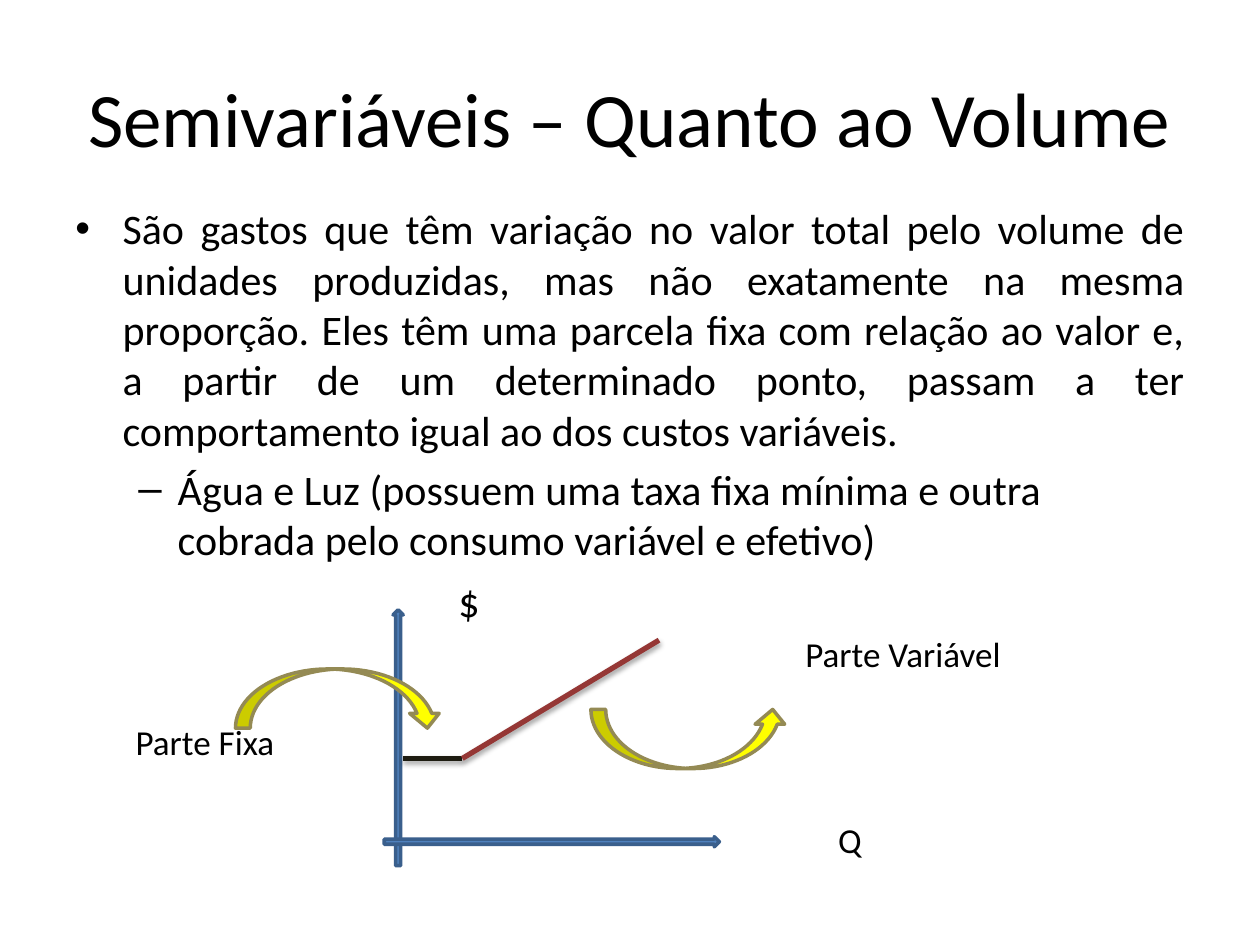
from typing import NamedTuple

from lxml.etree import SubElement
from pptx import Presentation
from pptx.dml.color import RGBColor
from pptx.enum.shapes import MSO_CONNECTOR, MSO_SHAPE
from pptx.enum.text import MSO_ANCHOR, PP_ALIGN
from pptx.oxml.ns import qn
from pptx.util import Pt


class Arrow(NamedTuple):
    kind: MSO_SHAPE
    box: tuple
    fill: str
    line: str


class Segment(NamedTuple):
    start: tuple
    end: tuple
    color: str
    shadow_alpha: int


class Label(NamedTuple):
    text: str
    left: float
    top: float
    size: int


BLUE, NAVY, YELLOW, OLIVE = "4F81BD", "3A5F8C", "FFFF00", "948A54"
KNEE = (264.2, 433.4)  # where the fixed part ends and the variable part begins

SEGMENTS = [
    Segment((230.4, 433.4), KNEE, "1E1C11", 35),
    Segment(KNEE, (376.6, 365.8), "953735", 38),
]
ARROWS = [
    Arrow(MSO_SHAPE.UP_ARROW, (224.6, 348.5, 5.8, 146.2), BLUE, NAVY),
    Arrow(MSO_SHAPE.RIGHT_ARROW, (219.6, 478.1, 191.5, 5.8), BLUE, NAVY),
    Arrow(MSO_SHAPE.CURVED_UP_ARROW, (337.7, 405.4, 112.3, 33.8), YELLOW, OLIVE),
    Arrow(MSO_SHAPE.CURVED_DOWN_ARROW, (134.6, 382.3, 118.1, 33.8), YELLOW, OLIVE),
]
LABELS = [
    Label("$", 262, 329, 24),
    Label("Parte Variável", 460.2, 361.5, 20),
    Label("Parte Fixa", 77.5, 411.5, 20),
    Label("Q", 479, 467.5, 20),
]


def rgb(color: str) -> RGBColor:
    return RGBColor.from_string(color)


def write(p, text: str, *, size=24, align=PP_ALIGN.LEFT, before=0.0,
          bullet="", margin=0.0, hang=0.0) -> None:
    """Fill a paragraph with one formatted run."""
    p.alignment = align
    p.space_before = Pt(before)
    if bullet:
        pPr = p._p.get_or_add_pPr()
        pPr.set("marL", str(Pt(margin)))
        pPr.set("indent", str(-Pt(hang)))
        SubElement(pPr, qn("a:buFont"), typeface="Arial")
        SubElement(pPr, qn("a:buChar"), char=bullet)
    r = p.add_run()
    r.text = text
    r.font.size = Pt(size)
    r.font.name = "Calibri"
    r.font.color.rgb = rgb("000000")


def add_box(s, left: float, top: float, width: float, height: float):
    tf = s.shapes.add_textbox(Pt(left), Pt(top), Pt(width), Pt(height)).text_frame
    tf.word_wrap = True
    return tf


def add_label(s, label: Label) -> None:
    tf = add_box(s, label.left, label.top, 150, label.size * 1.25)
    tf.margin_left = tf.margin_right = tf.margin_top = tf.margin_bottom = 0
    write(tf.paragraphs[0], label.text, size=label.size)


def add_arrow(s, arrow: Arrow) -> None:
    sp = s.shapes.add_shape(arrow.kind, *map(Pt, arrow.box))
    sp.shadow.inherit = False
    sp.fill.solid()
    sp.fill.fore_color.rgb = rgb(arrow.fill)
    sp.line.color.rgb = rgb(arrow.line)
    sp.line.width = Pt(2)


def add_segment(s, seg: Segment) -> None:
    line = s.shapes.add_connector(MSO_CONNECTOR.STRAIGHT,
                                  *map(Pt, seg.start + seg.end))
    line.line.color.rgb = rgb(seg.color)
    line.line.width = Pt(3)
    # Soft shadow straight below the line
    effects = SubElement(line._element.spPr, qn("a:effectLst"))
    shadow = SubElement(effects, qn("a:outerShdw"), blurRad=str(Pt(3.1)),
                        dist=str(Pt(1.7)), dir="5400000", rotWithShape="0")
    black = SubElement(shadow, qn("a:srgbClr"), val="000000")
    SubElement(black, qn("a:alpha"), val=str(seg.shadow_alpha * 1000))


def main() -> None:
    prs = Presentation()
    prs.slide_width, prs.slide_height = Pt(720), Pt(540)
    s = prs.slides.add_slide(prs.slide_layouts[5])

    # Title
    title = s.shapes.title
    title.left, title.top, title.width, title.height = map(Pt, (36, 21.6, 648, 90))
    title.text_frame.vertical_anchor = MSO_ANCHOR.MIDDLE
    write(title.text_frame.paragraphs[0], "Semivariáveis – Quanto ao Volume",
          size=44, align=PP_ALIGN.CENTER)

    # Definition and example
    tf = add_box(s, 36, 112.3, 648, 216)
    write(tf.paragraphs[0],
          "São gastos que têm variação no valor total pelo volume de unidades "
          "produzidas, mas não exatamente na mesma proporção. Eles têm uma parcela "
          "fixa com relação ao valor e, a partir de um determinado ponto, passam a "
          "ter comportamento igual ao dos custos variáveis.",
          align=PP_ALIGN.JUSTIFY, before=4.8, bullet="•", margin=27, hang=27)
    write(tf.add_paragraph(),
          "Água e Luz (possuem uma taxa fixa mínima e outra cobrada pelo consumo "
          "variável e efetivo)",
          before=4.8, bullet="–", margin=58.5, hang=22.5)

    # Cost diagram: labels, axes, cost line, pointers
    for label in LABELS:
        add_label(s, label)
    for arrow in ARROWS[:2]:
        add_arrow(s, arrow)
    for seg in SEGMENTS:
        add_segment(s, seg)
    for arrow in ARROWS[2:]:
        add_arrow(s, arrow)

    prs.save("out.pptx")


if __name__ == "__main__":
    main()
